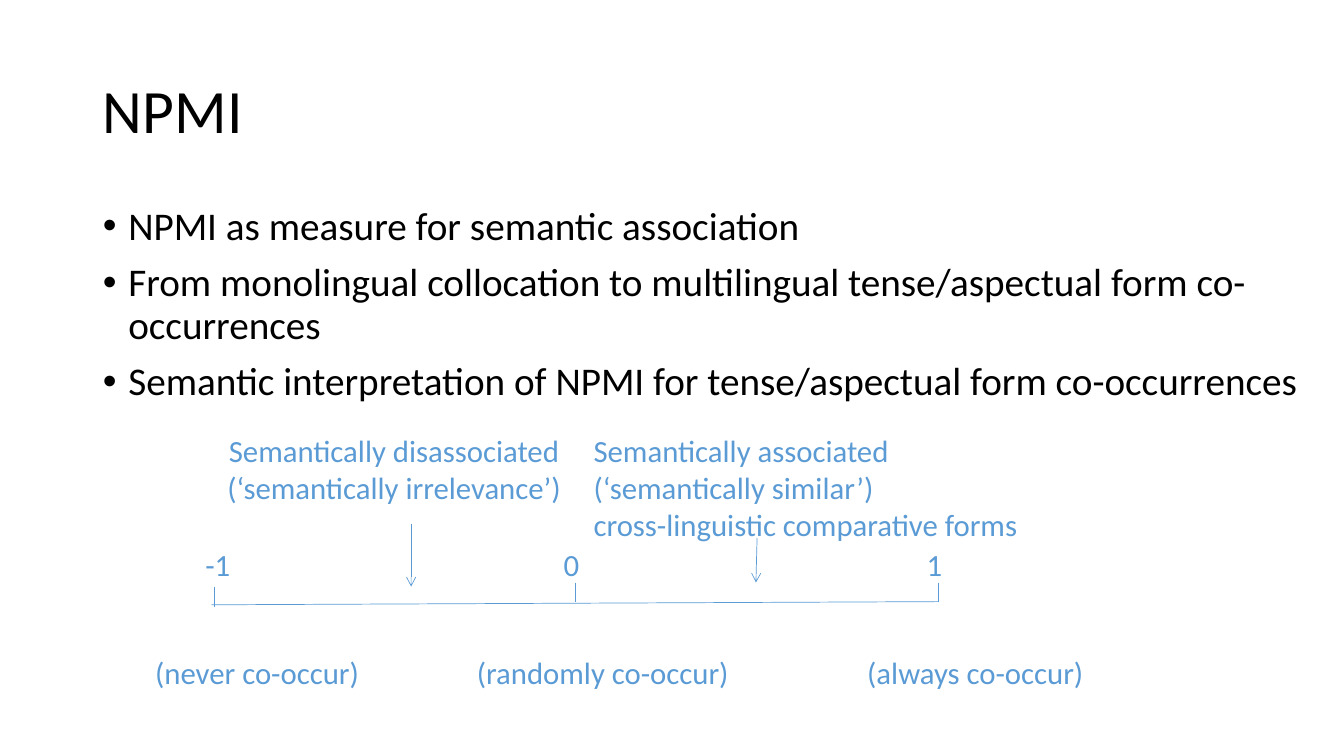
from lxml import etree
from pptx import Presentation
from pptx.dml.color import RGBColor
from pptx.enum.shapes import MSO_CONNECTOR
from pptx.enum.text import MSO_ANCHOR, MSO_AUTO_SIZE, PP_ALIGN
from pptx.oxml.ns import qn
from pptx.util import Cm, Pt

LEFT, MID = PP_ALIGN.LEFT, PP_ALIGN.CENTER
TOP, MIDDLE = MSO_ANCHOR.TOP, MSO_ANCHOR.MIDDLE
FIXED = MSO_AUTO_SIZE.NONE
LINE = MSO_CONNECTOR.STRAIGHT
FONT = "Calibri"
COLORS = {"text": "000000", "scale": "5B9BD5"}

BULLETS = [
    "NPMI as measure for semantic association",
    "From monolingual collocation to multilingual tense/aspectual form co-occurrences",
    "Semantic interpretation of NPMI for tense/aspectual form co-occurrences",
]
APART = ["Semantically disassociated", "(‘semantically irrelevance’)"]
ALIKE = [
    "Semantically associated",
    "(‘semantically similar’)",
    "cross-linguistic comparative forms",
]
MARKS = [
    ("-1", 5.49, "(never co-occur)", 6.48, 5.41, 14.78, 15.29),
    ("0", 14.4, "(randomly co-occur)", 15.19, 14.5, 14.68, 15.16),
    ("1", 23.55, "(always co-occur)", 24.58, 23.65, 14.68, 15.16),
]


def write(frame, lines, size=22, color="scale", align=LEFT, anchor=TOP,
          space=1.0, gap=0, bullet=False):
    frame.word_wrap = True
    frame.auto_size = FIXED
    frame.vertical_anchor = anchor
    for i, line in enumerate(lines):
        para = frame.paragraphs[0] if i == 0 else frame.add_paragraph()
        para.alignment = align
        para.line_spacing = space
        para.space_before = Pt(gap)
        run = para.add_run()
        run.text = line
        run.font.name = FONT
        run.font.size = Pt(size)
        run.font.color.rgb = RGBColor.from_string(COLORS[color])
        if bullet:
            props = para._p.get_or_add_pPr()
            props.set("marL", str(Cm(0.64)))
            props.set("indent", str(-Cm(0.64)))
            font = etree.SubElement(props, qn("a:buFont"))
            font.set("typeface", "Arial")
            etree.SubElement(props, qn("a:buChar")).set("char", "•")


def place(shape, x, y, w, h):
    shape.left, shape.top = Cm(x), Cm(y)
    shape.width, shape.height = Cm(w), Cm(h)


def label(slide, lines, x, y, w, align=MID):
    left = x - w / 2 if align == MID else x
    box = slide.shapes.add_textbox(Cm(left), Cm(y), Cm(w), Cm(0.95 * len(lines)))
    frame = box.text_frame
    frame.margin_left = frame.margin_right = 0
    frame.margin_top = frame.margin_bottom = 0
    write(frame, lines, align=align)


def stroke(slide, x1, y1, x2, y2, arrow=False):
    line = slide.shapes.add_connector(LINE, Cm(x1), Cm(y1), Cm(x2), Cm(y2))
    line.line.color.rgb = RGBColor.from_string(COLORS["scale"])
    line.line.width = Pt(0.5)
    props = line._element.spPr
    if arrow:
        etree.SubElement(props.find(qn("a:ln")), qn("a:tailEnd")).set("type", "arrow")
    etree.SubElement(props, qn("a:effectLst"))


def main():
    deck = Presentation()
    deck.slide_width, deck.slide_height = Cm(33.87), Cm(19.05)
    slide = deck.slides.add_slide(deck.slide_layouts[1])

    title, body = slide.placeholders
    place(title, 2.34, 1.02, 29.21, 3.68)
    write(title.text_frame, ["NPMI"], size=44, color="text", anchor=MIDDLE, space=0.9)
    place(body, 2.34, 5.08, 30.81, 12.09)
    write(body.text_frame, BULLETS, size=28, color="text", space=0.9, gap=10, bullet=True)

    label(slide, APART, 9.93, 10.87, 10)
    label(slide, ALIKE, 14.96, 10.87, 13, align=LEFT)

    stroke(slide, 5.33, 15.24, 23.65, 15.16)
    for value, center, note, middle, tick, top, base in MARKS:
        stroke(slide, tick, top, tick, base)
        label(slide, [value], center, 13.76, 2)
        label(slide, [note], middle, 16.48, 8)

    stroke(slide, 10.36, 13.21, 10.36, 14.78, arrow=True)
    stroke(slide, 19.08, 13.56, 19.05, 14.68, arrow=True)
    deck.save("out.pptx")


if __name__ == "__main__":
    main()
